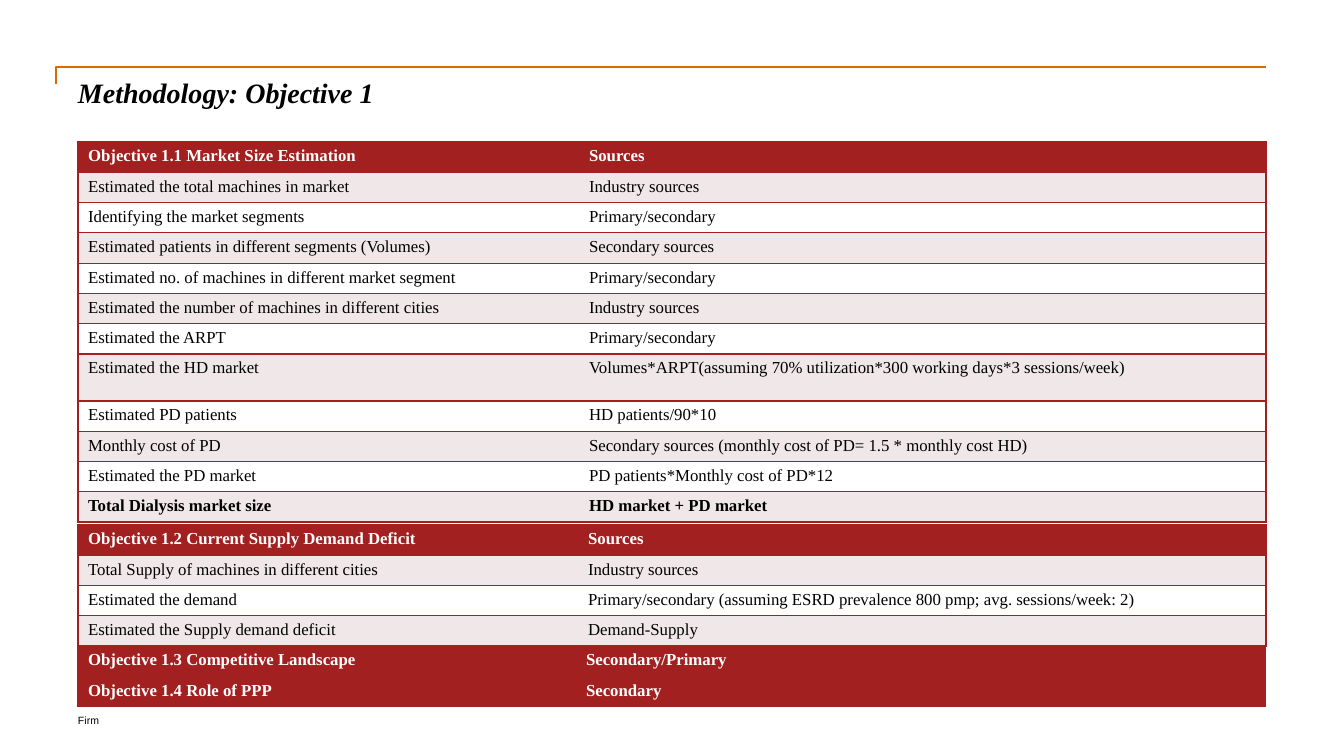
from lxml import etree
from pptx import Presentation
from pptx.dml.color import RGBColor
from pptx.enum.text import MSO_ANCHOR
from pptx.oxml.ns import qn
from pptx.util import Pt

TOP = MSO_ANCHOR.TOP
PX = 914400 / 100.8
SERIF, SANS = "Times New Roman", "Arial"
COLORS = {"red": "A32020", "pale": "F0E8E8", "white": "FFFFFF",
          "black": "000000", "orange": "DC6900"}

TITLE = "Methodology: Objective 1"
FOOTER = "Firm"
SIZE_ROWS = [
    ("Objective 1.1 Market Size Estimation", "Sources"),
    ("Estimated the total machines in market", "Industry sources"),
    ("Identifying the market segments", "Primary/secondary"),
    ("Estimated patients in different segments (Volumes)", "Secondary sources"),
    ("Estimated no. of machines in different market segment", "Primary/secondary"),
    ("Estimated the number of machines in different cities", "Industry sources"),
    ("Estimated the ARPT", "Primary/secondary"),
    ("Estimated the HD market",
     "Volumes*ARPT(assuming 70% utilization*300 working days*3 sessions/week)"),
    ("Estimated PD patients", "HD patients/90*10"),
    ("Monthly cost of PD",
     "Secondary sources (monthly cost of PD= 1.5 * monthly cost HD)"),
    ("Estimated the PD market", "PD patients*Monthly cost of PD*12"),
    ("Total Dialysis market size", "HD market + PD market"),
]
DEFICIT_ROWS = [
    ("Objective 1.2 Current Supply Demand Deficit", "Sources"),
    ("Total Supply of machines in different cities", "Industry sources"),
    ("Estimated the demand",
     "Primary/secondary (assuming ESRD prevalence 800 pmp; avg. sessions/week: 2)"),
    ("Estimated the Supply demand deficit", "Demand-Supply"),
]
OTHER_ROWS = [
    ("Objective 1.3 Competitive Landscape", "Secondary/Primary"),
    ("Objective 1.4 Role of PPP", "Secondary"),
]
LEFT, WIDTH = 78, 1188
# top, height, first column, rows, red rows, bold rows, tall rows (px)
TABLES = [
    (142, 371, 501, SIZE_ROWS, {0}, {0, 11}, {7: 47}),
    (525, 116, 500, DEFICIT_ROWS, {0}, {0}, {}),
    (646, 58, 498, OTHER_ROWS, {0, 1}, {0, 1}, {}),
]


def emu(px):
    return round(px * PX)


def rgb(name):
    return RGBColor.from_string(COLORS[name])


def style(frame, font, size, color, bold=False, italic=False):
    for run in frame.paragraphs[0].runs:
        face = run.font
        face.name, face.size = font, Pt(size)
        face.bold, face.italic = bold, italic
        face.color.rgb = rgb(color)


def add_text(slide, text, box, *look):
    frame = slide.shapes.add_textbox(*map(emu, box)).text_frame
    frame.margin_left = frame.margin_right = 0
    frame.margin_top = frame.margin_bottom = 0
    frame.word_wrap, frame.vertical_anchor = True, TOP
    frame.text = text
    style(frame, *look)


def add_borders(cell, sides):
    """Draw red lines on the named sides and none on the others."""
    props = cell._tc.get_or_add_tcPr()
    for spot, side in enumerate("LRTB"):
        line = etree.Element(qn("a:ln" + side), w=str(Pt(1)))
        if side in sides:
            fill = etree.SubElement(line, qn("a:solidFill"))
            etree.SubElement(fill, qn("a:srgbClr"), val=COLORS["red"])
        else:
            etree.SubElement(line, qn("a:noFill"))
        props.insert(spot, line)


def add_grid(slide, top, height, first, rows, red, bold, tall):
    box = map(emu, (LEFT, top, WIDTH, height))
    table = slide.shapes.add_table(len(rows), 2, *box).table
    table.columns[0].width = emu(first)
    table.columns[1].width = emu(WIDTH - first)
    step = (height - sum(tall.values())) / (len(rows) - len(tall))
    for r, row in enumerate(rows):
        table.rows[r].height = emu(tall.get(r, step))
        shade = "red" if r in red else "pale" if r % 2 else "white"
        ink = "white" if r in red else "black"
        for c, text in enumerate(row):
            cell = table.cell(r, c)
            cell.text = text
            cell.fill.solid()
            cell.fill.fore_color.rgb = rgb(shade)
            style(cell.text_frame, SERIF, 12, ink, r in bold)
            add_borders(cell, ("LTB", "RTB")[c])


def add_rule(slide):
    path = slide.shapes.build_freeform(56, 84, scale=PX)
    path.add_line_segments([(56, 67), (1266, 67)], close=False)
    rule = path.convert_to_shape()
    rule.shadow.inherit = False
    rule.fill.background()
    rule.line.color.rgb = rgb("orange")
    rule.line.width = Pt(1)


def main():
    deck = Presentation()
    deck.slide_width, deck.slide_height = emu(1344), emu(756)
    slide = deck.slides.add_slide(deck.slide_layouts[6])
    add_text(slide, FOOTER, (LEFT, 714, 381, 17), SANS, 7.5, "black")
    add_rule(slide)
    add_text(slide, TITLE, (LEFT, 76, WIDTH, 60), SERIF, 20, "black", True, True)
    for table in TABLES:
        add_grid(slide, *table)
    deck.save("out.pptx")


if __name__ == "__main__":
    main()
